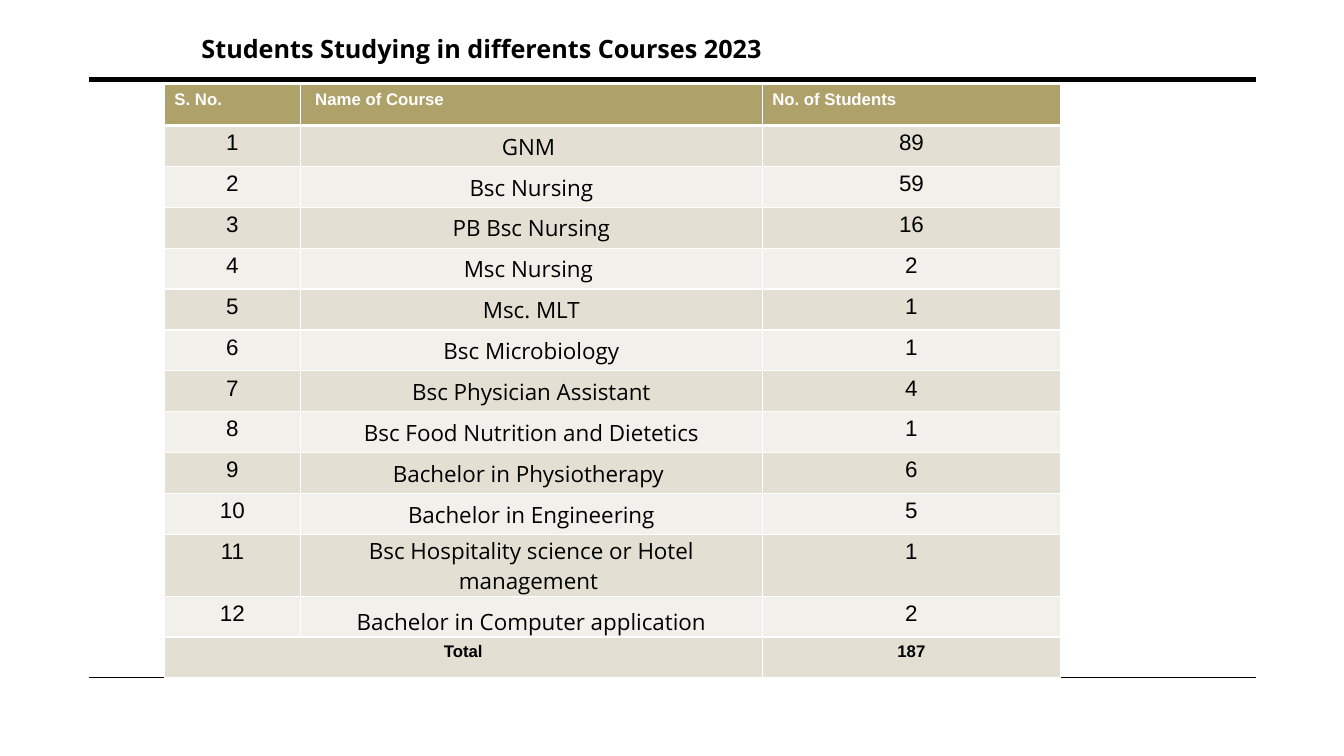
from lxml import etree
from pptx import Presentation
from pptx.dml.color import RGBColor
from pptx.enum import shapes, text
from pptx.oxml.ns import qn
from pptx.util import Inches, Pt

TITLE = "Students Studying in differents Courses 2023"
HEADINGS = ["S. No.", " Name of Course", "No. of Students"]
COURSES = [
    ("GNM ", 89),
    ("Bsc Nursing", 59),
    ("PB Bsc Nursing", 16),
    ("Msc Nursing ", 2),
    ("Msc. MLT", 1),
    ("Bsc Microbiology", 1),
    ("Bsc Physician Assistant", 4),
    ("Bsc Food Nutrition and Dietetics", 1),
    ("Bachelor in Physiotherapy ", 6),
    ("Bachelor in Engineering", 5),
    ("Bsc Hospitality science or Hotel management ", 1),
    ("Bachelor in Computer application", 2),
]
TOTAL = sum(count for _, count in COURSES)
COLUMN_WIDTHS = [1.35, 4.58, 2.96]
TABLE_HEIGHT = 5.68
RULES = [(0.79, 3.5), (6.72, 1)]  # height on the slide, line width
COLORS = {"ink": "000000", "white": "FFFFFF", "header": "AEA16A",
          "dark_band": "E3DFD3", "light_band": "F1F0EA"}
CENTER = text.PP_ALIGN.CENTER
MIDDLE, BOTTOM = text.MSO_ANCHOR.MIDDLE, text.MSO_ANCHOR.BOTTOM


def color(name):
    return RGBColor.from_string(COLORS[name])


def write(para, words, size, font="Arial", ink="ink", bold=False, align=None):
    para.text = words
    para.alignment = align
    para.font.size = Pt(size)
    para.font.name = font
    para.font.bold = bold
    para.font.color.rgb = color(ink)


def paint_cell(cell, fill, bottom_width=1):
    props = cell._tc.get_or_add_tcPr()
    for side, width in (("L", 1), ("R", 1), ("T", 1), ("B", bottom_width)):
        edge = etree.SubElement(props, qn("a:ln" + side), w=str(Pt(width)))
        solid = etree.SubElement(edge, qn("a:solidFill"))
        etree.SubElement(solid, qn("a:srgbClr"), val=COLORS["white"])
    cell.fill.solid()
    cell.fill.fore_color.rgb = color(fill)


deck = Presentation()
deck.slide_width, deck.slide_height = Inches(13.33), Inches(7.5)
page = deck.slides.add_slide(deck.slide_layouts[6])

# Rules above and below the table
for y, width in RULES:
    rule = page.shapes.add_connector(shapes.MSO_CONNECTOR.STRAIGHT, Inches(0.88),
                                     Inches(y), Inches(12.46), Inches(y))
    rule.line.color.rgb = color("ink")
    rule.line.width = Pt(width)
    etree.SubElement(rule._element.spPr, qn("a:effectLst"))

# Table of courses
row_count = len(COURSES) + 2
table = page.shapes.add_table(row_count, len(HEADINGS), Inches(1.63), Inches(0.84),
                              Inches(sum(COLUMN_WIDTHS)), Inches(TABLE_HEIGHT)).table
table.horz_banding = False
for column, width in zip(table.columns, COLUMN_WIDTHS):
    column.width = Inches(width)
for row in table.rows:
    row.height = Inches(TABLE_HEIGHT / row_count)

for index, heading in enumerate(HEADINGS):
    cell = table.cell(0, index)
    paint_cell(cell, "header", bottom_width=3)
    write(cell.text_frame.paragraphs[0], heading, 12, ink="white", bold=True)

for number, (course, count) in enumerate(COURSES, 1):
    band = "dark_band" if number % 2 else "light_band"
    for index, words in enumerate((str(number), course, str(count))):
        cell = table.cell(number, index)
        paint_cell(cell, band)
        font = "Open Sans" if index == 1 else "Arial"
        write(cell.text_frame.paragraphs[0], words, 16, font, align=CENTER)
    name_cell = table.cell(number, 1)
    name_cell.margin_left = name_cell.margin_right = name_cell.margin_top = Inches(0.01)
    name_cell.margin_bottom = 0
    name_cell.vertical_anchor = BOTTOM if number == len(COURSES) else MIDDLE

# Total row
last = row_count - 1
table.cell(last, 0).merge(table.cell(last, 1))
for index in range(len(HEADINGS)):
    paint_cell(table.cell(last, index), "dark_band")
for index, words in ((0, "Total"), (2, str(TOTAL))):
    write(table.cell(last, index).text_frame.paragraphs[0], words, 12,
          bold=True, align=CENTER)

# Title
box = page.shapes.add_textbox(Inches(1.9), Inches(0.28), Inches(6.67), Inches(0.4))
box.text_frame.word_wrap = True
box.text_frame.auto_size = text.MSO_AUTO_SIZE.SHAPE_TO_FIT_TEXT
write(box.text_frame.paragraphs[0], TITLE, 18, "Open Sans", bold=True)

deck.save("out.pptx")
